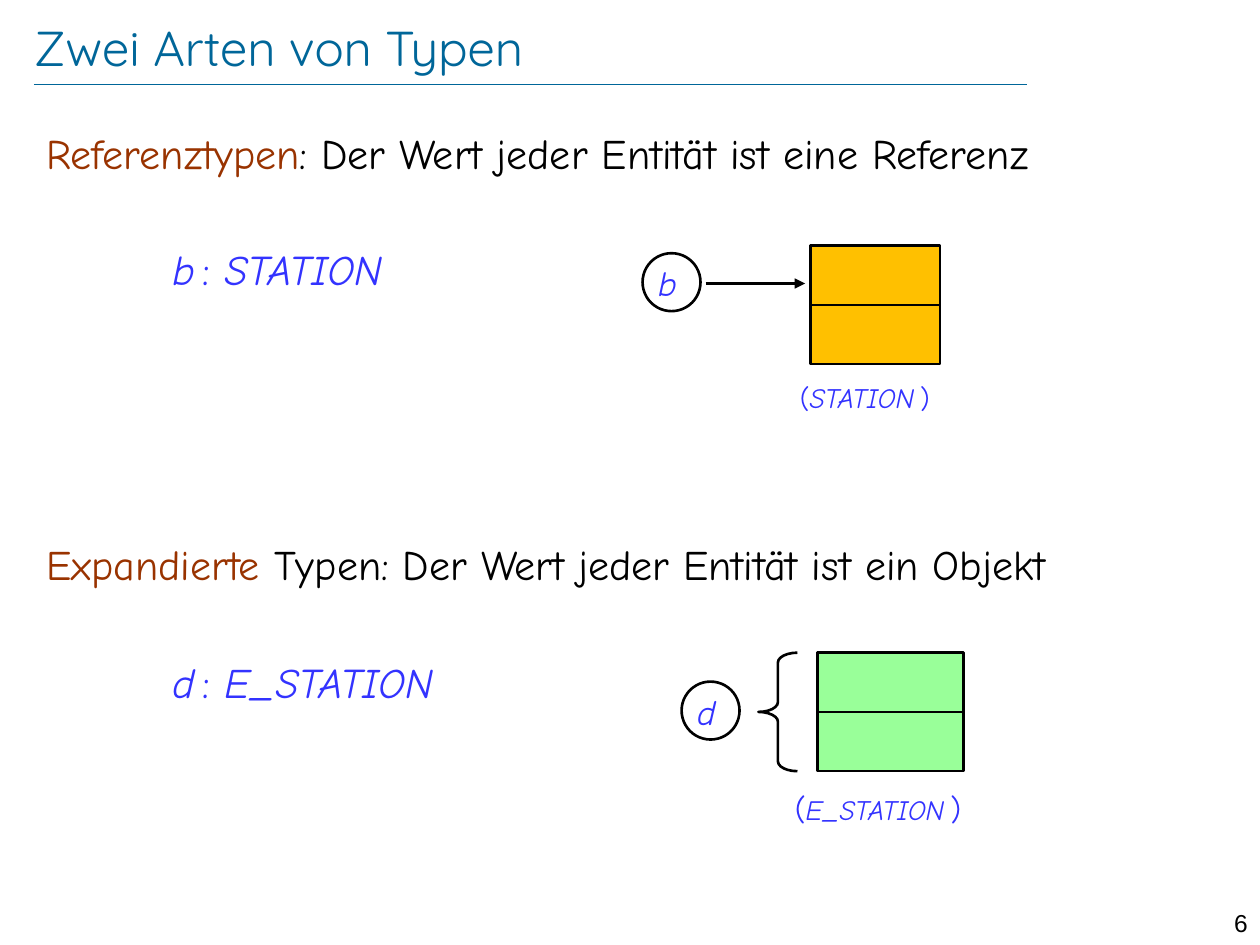
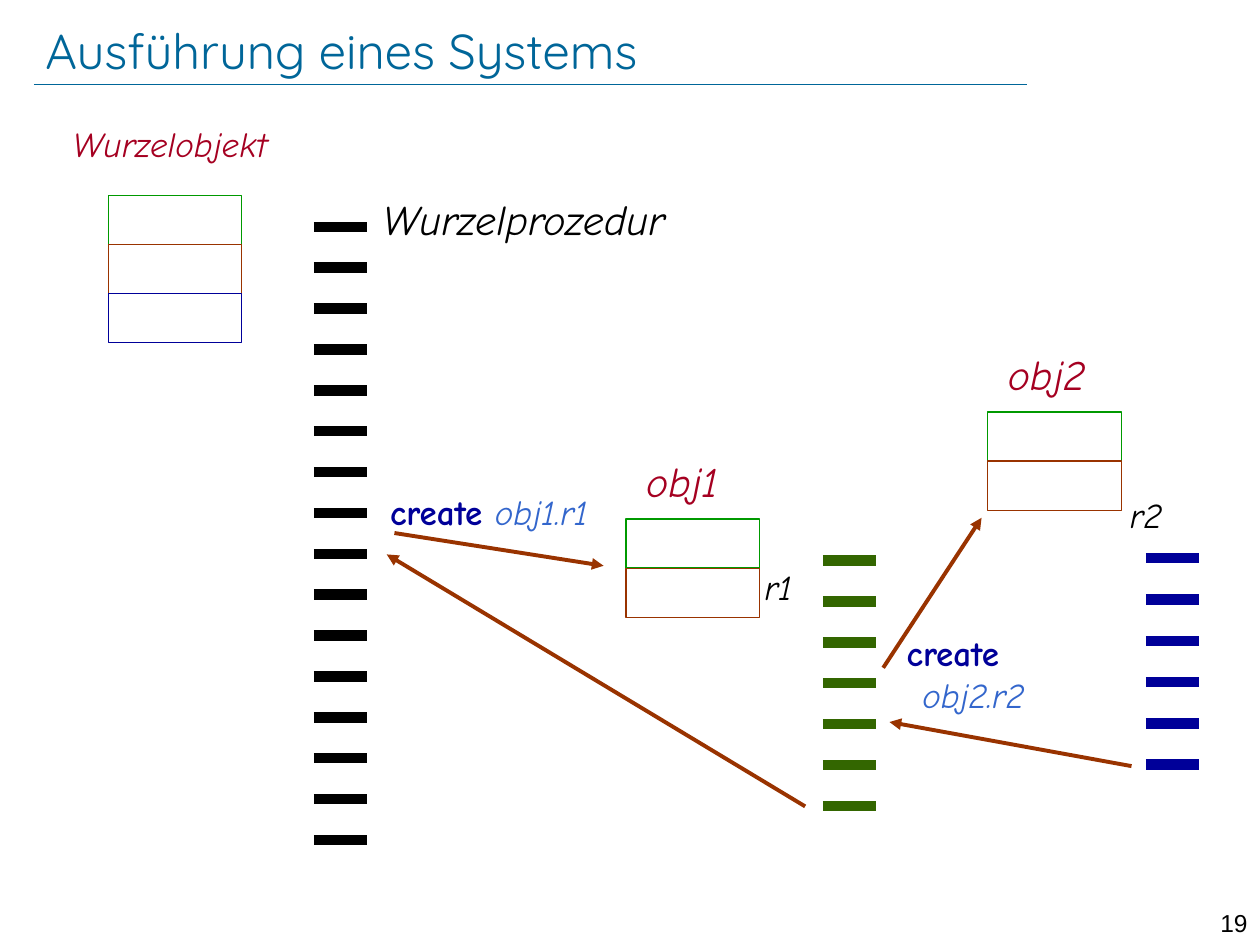
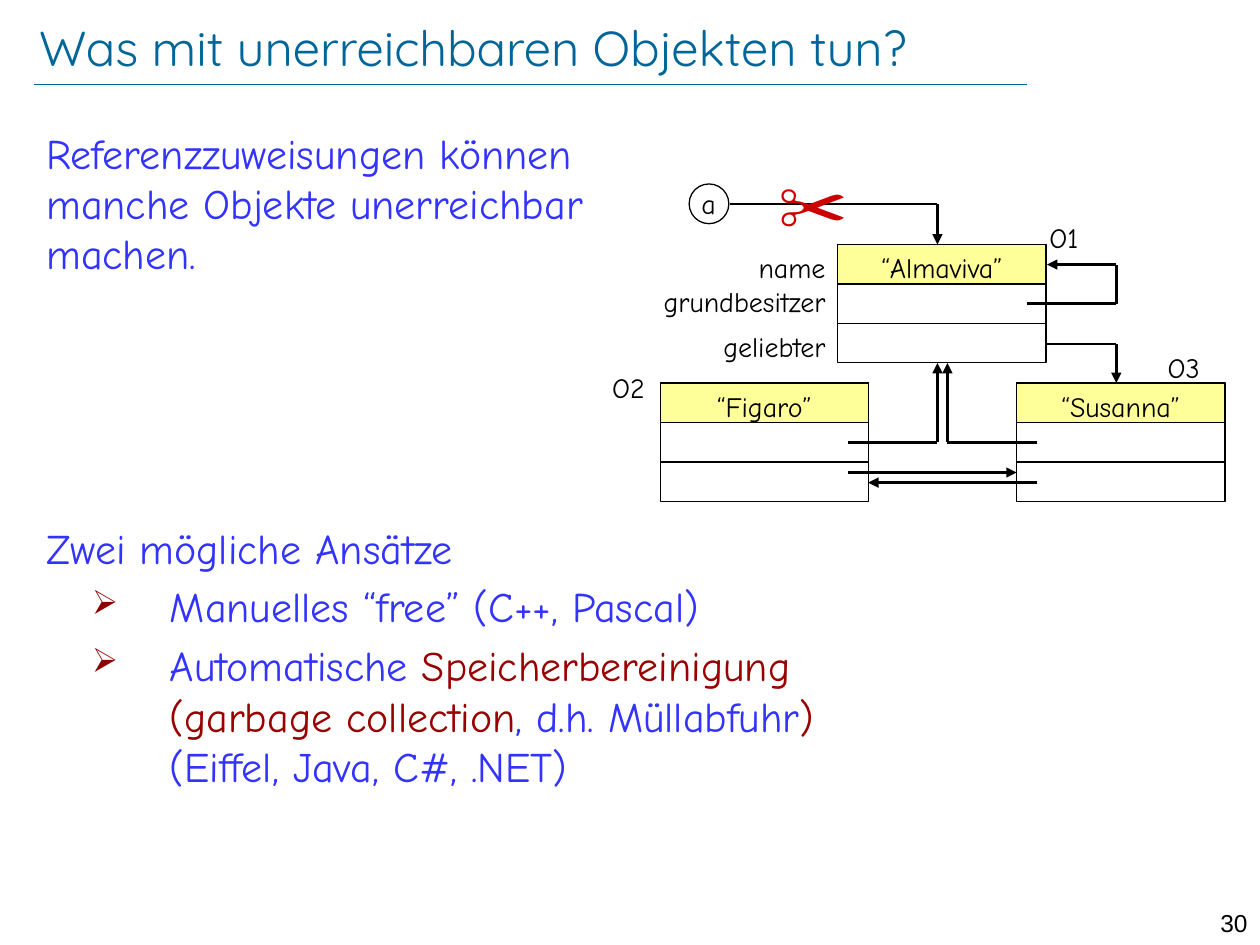
from dataclasses import dataclass
from itertools import pairwise

from lxml.etree import SubElement
from pptx import Presentation
from pptx.dml.color import RGBColor
from pptx.enum.shapes import MSO_CONNECTOR as Connector, MSO_SHAPE as Preset
from pptx.enum.text import MSO_ANCHOR as Anchor, MSO_AUTO_SIZE as AutoSize, PP_ALIGN as Align
from pptx.oxml.ns import qn
from pptx.util import Pt


@dataclass(frozen=True)
class Theme:
    title_font: str = "Quicksand"
    text_font: str = "Comic Neue"
    number_font: str = "Arial"

    title_size: float = 28
    body_size: float = 24
    label_size: float = 20
    small_size: float = 16
    number_size: float = 14
    scissors_size: float = 40

    hairline: float = 0.25
    thin: float = 0.75
    medium: float = 1.5
    thick: float = 2.25
    dash: float = 6

    black: str = "000000"
    title: str = "006699"
    code: str = "3333FF"
    term: str = "993300"
    strong: str = "990000"
    bullet: str = "8B0000"
    reference_object: str = "FFC000"
    expanded_object: str = "99FF99"
    header: str = "FFFF99"
    object_name: str = "A50021"
    green: str = "009900"
    dark_green: str = "336600"
    navy: str = "000099"
    call: str = "3366CC"
    scissors: str = "CC0000"


THEME = Theme()
BODY_LEFT, BODY_TOP, BODY_WIDTH = 19.4, 69.1, 693
CODE_LEFT = 91.4
CELL_WIDTH, CELL_HEIGHT = 76.3, 28.1
RECORD_WIDTH, RECORD_HEIGHT = 119, 67.7


def color(value):
    return RGBColor.from_string(value)


def add_run(paragraph, text, *, size=THEME.body_size, ink=THEME.black,
            font=THEME.text_font, bold=False, italic=False):
    for index, line in enumerate(text.split("\n")):
        if index:
            paragraph.add_line_break()
        if line:
            run = paragraph.add_run()
            run.text = line
            run.font.name = font
            run.font.size = Pt(size)
            run.font.bold = bold
            run.font.italic = italic
            run.font.color.rgb = color(ink)


def write(paragraph, text, *, align=Align.LEFT, before=0, hanging=None, bullet=None, **style):
    """Fill a paragraph; text is a string or a list of (string, style changes).

    hanging is (left margin, first-line indent)."""
    properties = paragraph._p.get_or_add_pPr()
    if hanging:
        margin, indent = hanging
        properties.set("marL", str(Pt(margin)))
        properties.set("indent", str(Pt(indent)))
    if bullet:
        bullet_color = SubElement(properties, qn("a:buClr"))
        SubElement(bullet_color, qn("a:srgbClr"), val=THEME.bullet)
        SubElement(properties, qn("a:buSzPct"), val="80000")
        SubElement(properties, qn("a:buChar"), char=bullet)
    paragraph.alignment = align
    paragraph.space_before = Pt(before)
    parts = [(text, {})] if isinstance(text, str) else text
    for content, changes in parts:
        add_run(paragraph, content, **{**style, **changes})


def add_text(shapes, text, left, top, *, width=200, height=32, **style):
    box = shapes.add_textbox(Pt(left), Pt(top), Pt(width), Pt(height))
    frame = box.text_frame
    frame.word_wrap = True
    write(frame.paragraphs[0], text, **style)
    return frame


def add_preset(shapes, preset, left, top, width, height, *, fill=None,
               line=THEME.black, weight=THEME.medium):
    shape = shapes.add_shape(preset, Pt(left), Pt(top), Pt(width), Pt(height))
    shape.shadow.inherit = False
    if fill:
        shape.fill.solid()
        shape.fill.fore_color.rgb = color(fill)
    else:
        shape.fill.background()
    shape.line.color.rgb = color(line)
    shape.line.width = Pt(weight)
    return shape


def add_path(shapes, *points, ink=THEME.black, weight=THEME.medium, arrow=False):
    """Join the points with straight lines; an arrowhead may close the last one."""
    for start, end in pairwise(points):
        connector = shapes.add_connector(Connector.STRAIGHT, *map(Pt, start + end))
        connector.line.color.rgb = color(ink)
        connector.line.width = Pt(weight)
        if arrow and end == points[-1]:
            SubElement(connector.line._get_or_add_ln(), qn("a:tailEnd"), type="triangle")
        SubElement(connector._element.spPr, qn("a:effectLst"))


def add_divided_box(shapes, left, top, width, height, rows, *, fill=None, weight=THEME.medium):
    add_preset(shapes, Preset.RECTANGLE, left, top, width, height, fill=fill, weight=weight)
    for row in range(1, rows):
        y = top + height * row / rows
        add_path(shapes, (left, y), (left + width, y), weight=weight)


def add_entity(shapes, name, left, top, diameter, *, offset, weight=THEME.medium, **style):
    """Draw a circle with its variable name, the name box shifted by offset."""
    add_preset(shapes, Preset.OVAL, left, top, diameter, diameter, weight=weight)
    add_text(shapes, name, left + offset[0], top + offset[1], width=28, **style)


def add_record(shapes, name, left, top):
    """Draw an object with a named header and two reference fields."""
    add_preset(shapes, Preset.RECTANGLE, left, top, RECORD_WIDTH, RECORD_HEIGHT / 3,
               fill=THEME.header, weight=THEME.thin)
    add_divided_box(shapes, left, top, RECORD_WIDTH, RECORD_HEIGHT, 3, weight=THEME.thin)
    add_text(shapes, name, left, top, width=RECORD_WIDTH, height=26.6,
             size=THEME.small_size, align=Align.CENTER)


def add_runtime_object(slide, name, left, top, colors, *, offset=(4.3, -39.6),
                       size=THEME.body_size):
    """Group a stack of coloured cells with the object's name above it."""
    shapes = slide.shapes.add_group_shape().shapes
    for row, line in enumerate(colors):
        add_preset(shapes, Preset.RECTANGLE, left, top + row * CELL_HEIGHT,
                   CELL_WIDTH, CELL_HEIGHT, line=line, weight=THEME.thin)
    add_text(shapes, name, left + offset[0], top + offset[1], width=140,
             size=size, ink=THEME.object_name, italic=True)


def add_instructions(shapes, left, top, count, ink, *, pitch=23.36):
    """Draw a column of thick dashes standing for a procedure's instructions."""
    for index in range(count):
        y = top + index * pitch
        add_path(shapes, (left, y), (left + 30.2, y), ink=ink, weight=THEME.dash)


def add_slide(presentation, title, number, left, top):
    slide = presentation.slides.add_slide(presentation.slide_layouts[5])
    heading = slide.shapes.title
    heading.left, heading.top, heading.width, heading.height = map(Pt, (left, top, 660, 35))
    frame = heading.text_frame
    frame.margin_left = frame.margin_right = frame.margin_top = frame.margin_bottom = 0
    frame.vertical_anchor = Anchor.MIDDLE
    frame.auto_size = AutoSize.NONE
    write(frame.paragraphs[0], title, size=THEME.title_size, font=THEME.title_font,
          ink=THEME.title)
    add_path(slide.shapes, (19.4, 48.2), (586.8, 48.2), ink=THEME.title, weight=THEME.hairline)
    add_text(slide.shapes, str(number), 680.4, 515.5, width=39.6, height=17.3,
             size=THEME.number_size, font=THEME.number_font, align=Align.RIGHT)
    return slide


def declaration(name, type_name):
    return [(name, {"italic": True}), (" ", {"size": 14}), (": ", {}),
            (type_name, {"italic": True})]


def type_label(type_name, bracket_size):
    bracket = {"size": bracket_size}
    return [("(", bracket), (type_name, {"italic": True}), (" ", {"size": 10.5}), (")", bracket)]


def build_kinds_of_types(presentation):
    shapes = add_slide(presentation, "Zwei Arten von Typen", 6, 19.4, 9.4).shapes
    code = {"ink": THEME.code}
    term = {"ink": THEME.term}
    add_text(shapes, [("Referenztypen", term), (": Der Wert jeder Entität ist eine Referenz", {})],
             BODY_LEFT, BODY_TOP, width=BODY_WIDTH)
    add_text(shapes, declaration("b", "STATION"), CODE_LEFT, 135.4, **code)
    add_text(shapes, [("Expandierte ", term), ("Typen: Der Wert jeder Entität ist ein Objekt", {})],
             BODY_LEFT, 304, width=BODY_WIDTH)
    add_text(shapes, declaration("d", "E_STATION"), CODE_LEFT, 371.4, **code)

    name_style = {"offset": (1.8, 1.4), "size": THEME.label_size, "italic": True, **code}
    add_divided_box(shapes, 463, 140.4, 74.2, 67.7, 2, fill=THEME.reference_object)
    add_entity(shapes, "b", 367.2, 144.7, 33.1, **name_style)
    add_path(shapes, (403.2, 162), (460.1, 162), arrow=True)
    add_text(shapes, type_label("STATION", THEME.small_size), 450, 213.8, width=116,
             size=THEME.small_size, **code)

    add_divided_box(shapes, 467.3, 373, 83.5, 67.7, 2, fill=THEME.expanded_object)
    add_entity(shapes, "d", 389.5, 389.5, 33.1, **name_style)
    brace = add_preset(shapes, Preset.LEFT_BRACE, 433.4, 373, 22.3, 67.7)
    brace.adjustments[0] = 0.25
    add_text(shapes, type_label("E_STATION", 18), 447.1, 447.1, width=141,
             size=THEME.small_size, **code)


def build_execution(presentation):
    slide = add_slide(presentation, "Ausführung eines Systems", 19, 25.9, 10.8)
    shapes = slide.shapes
    two_fields = (THEME.green, THEME.term)
    add_runtime_object(slide, "Wurzelobjekt", 61.9, 111.6, (*two_fields, THEME.navy),
                       offset=(-27.3, -45.4), size=THEME.label_size)
    add_runtime_object(slide, "obj1", 357.8, 296.6, two_fields)
    add_runtime_object(slide, "obj2", 564.5, 235.4, two_fields)

    add_instructions(shapes, 179.3, 129.6, 16, THEME.black)
    add_instructions(shapes, 470.2, 320.3, 7, THEME.dark_green)
    add_instructions(shapes, 654.8, 319, 6, THEME.navy, pitch=23.6)

    for start, end in (
        ((225.4, 304.6), (344.9, 323.3)),
        ((504.7, 381.6), (560.9, 295.9)),
        ((460.1, 460.8), (221, 316.8)),
        ((646.6, 437.8), (508.3, 412.6)),
    ):
        add_path(shapes, start, end, ink=THEME.term, weight=THEME.thick, arrow=True)

    add_text(shapes, "Wurzelprozedur", 211.7, 107.3, italic=True)
    for routine, left, top in (("r1", 429.8, 319.7), ("r2", 638.6, 278.6)):
        add_text(shapes, routine, left, top, width=60, size=THEME.label_size, italic=True)
    keyword = {"bold": True, "ink": THEME.navy}
    call = {"italic": True, "ink": THEME.call}
    add_text(shapes, [("create ", keyword), ("obj1.r1", call)], 215.8, 276.5,
             size=THEME.label_size)
    add_text(shapes, [("create\n", keyword), ("obj2.r2", call)], 511, 357.1, width=100,
             height=55, size=THEME.label_size, hanging=(9, -9))


def build_unreachable_objects(presentation):
    shapes = add_slide(presentation, "Was mit unerreichbaren Objekten tun?", 30, 22.3, 9.4).shapes
    code = {"ink": THEME.code}
    strong = {"ink": THEME.strong}
    add_text(shapes, "Referenzzuweisungen können\nmanche Objekte unerreichbar\nmachen.",
             BODY_LEFT, BODY_TOP, width=340, height=95, **code)
    approaches = add_text(shapes, "Zwei mögliche Ansätze", BODY_LEFT, 294.8,
                          width=BODY_WIDTH, height=165, **code)
    for item in (
        "Manuelles “free” (C++, Pascal)",
        [("Automatische ", {}), ("Speicherbereinigung\n(garbage collection", strong),
         (", d.h. Müllabfuhr", {}), (")\n", strong), ("(Eiffel, Java, C#, .NET)", {})],
    ):
        write(approaches.add_paragraph(), item, before=4.8, hanging=(70.6, -44.6),
              bullet="➢", **code)

    for name, left, top in (
        ("“Almaviva”", 478.8, 139.7),
        ("“Figaro”", 377.3, 218.9),
        ("“Susanna”", 581, 218.9),
    ):
        add_record(shapes, name, left, top)
    small = {"size": THEME.small_size}
    for field, top in (("name", 139.7), ("grundbesitzer", 159.1), ("geliebter", 185)):
        add_text(shapes, field, 338.8, top, width=140, height=26.6, align=Align.RIGHT, **small)
    for label, left, top in (("O1", 592.6, 122.4), ("O2", 342.7, 208.1), ("O3", 660.2, 196.6)):
        add_text(shapes, label, left, top, width=39.6, height=26.6, **small)
    add_entity(shapes, "a", 393.8, 105.1, 22.7, offset=(0, -2.1), weight=THEME.thin, **small)

    for route in (
        ((416.9, 116.6), (535.7, 116.6), (535.7, 139.7)),
        ((586.8, 173.5), (637.9, 173.5), (637.9, 151.2), (598.3, 151.2)),
        ((598.3, 196.6), (637.9, 196.6), (637.9, 218.9)),
        ((484.6, 252.7), (535.7, 252.7), (535.7, 207.4)),
        ((592.6, 252.7), (541.4, 252.7), (541.4, 207.4)),
        ((484.6, 270), (581, 270)),
        ((592.6, 275.8), (496.1, 275.8)),
    ):
        add_path(shapes, *route, arrow=True)
    add_text(shapes, "✂", 437.8, 89.3, width=66.2, height=55.4,
             size=THEME.scissors_size, ink=THEME.scissors)


def main():
    presentation = Presentation()
    presentation.slide_width, presentation.slide_height = Pt(720), Pt(540)
    build_kinds_of_types(presentation)
    build_execution(presentation)
    build_unreachable_objects(presentation)
    presentation.save("out.pptx")


if __name__ == "__main__":
    main()
